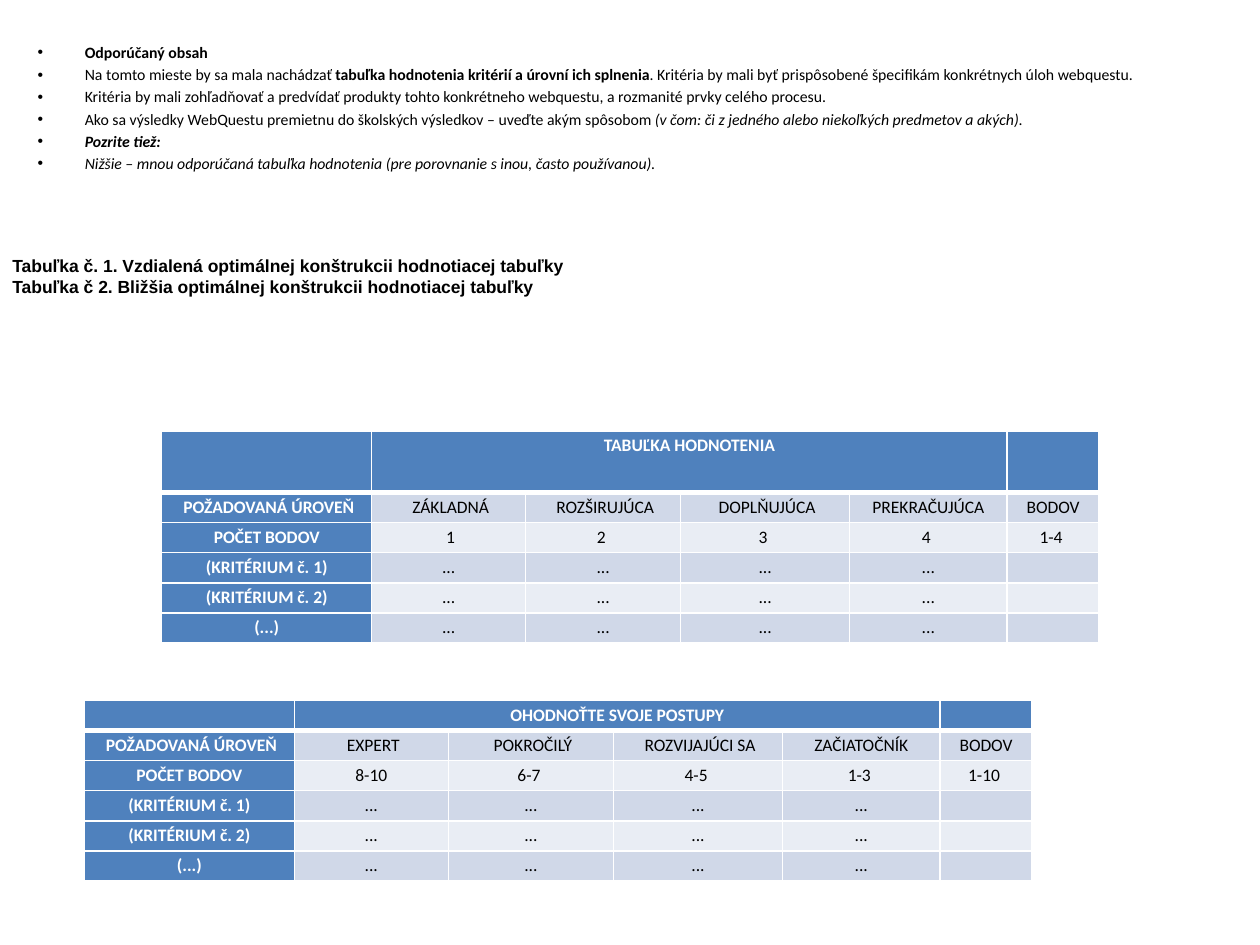
from lxml.etree import SubElement
from pptx import Presentation
from pptx.dml.color import RGBColor
from pptx.enum.shapes import MSO_SHAPE
from pptx.enum.text import MSO_ANCHOR, PP_ALIGN
from pptx.oxml.ns import qn
from pptx.util import Pt

BLACK = RGBColor(0x00, 0x00, 0x00)
WHITE = RGBColor(0xFF, 0xFF, 0xFF)
BLUE = RGBColor(0x4F, 0x81, 0xBD)
BAND_DARK = RGBColor(0xD0, 0xD8, 0xE8)
BAND_LIGHT = RGBColor(0xE9, 0xED, 0xF4)

BOLD, ITALIC = "bold", "italic"
RECOMMENDATIONS = [
    [("Odporúčaný obsah", BOLD)],
    [("Na tomto mieste by sa mala nachádzať ", ""),
     ("tabuľka hodnotenia kritérií a úrovní ich splnenia", BOLD),
     (". Kritéria by mali byť prispôsobené špecifikám konkrétnych úloh webquestu.", "")],
    [("Kritéria by mali zohľadňovať a predvídať produkty tohto konkrétneho webquestu, "
      "a rozmanité prvky celého procesu.", "")],
    [("Ako sa výsledky WebQuestu premietnu do školských výsledkov – uveďte akým spôsobom ", ""),
     ("(v čom: či z jedného alebo niekoľkých predmetov a akých)", ITALIC),
     (".", "")],
    [("Pozrite tiež:", BOLD + ITALIC)],
    [("Nižšie – mnou odporúčaná tabuľka hodnotenia "
      "(pre porovnanie s inou, často používanou). ", ITALIC)],
]
CAPTIONS = [
    "Tabuľka č. 1. Vzdialená optimálnej konštrukcii hodnotiacej tabuľky",
    "Tabuľka č 2. Bližšia optimálnej konštrukcii hodnotiacej tabuľky",
]
CRITERIA = [[name] + ["..."] * 4 + [""]
            for name in ("(KRITÉRIUM č. 1)", "(KRITÉRIUM č. 2)", "(...)")]
ROW_HEIGHT = 17.2


def style_font(font, name, size, color, bold=None):
    """Set the common properties of a font."""
    font.name, font.size, font.bold = name, Pt(size), bold
    font.color.rgb = color


def add_bullet(paragraph):
    """Give a paragraph a hanging round bullet."""
    properties = paragraph._p.get_or_add_pPr()
    properties.set("marL", str(Pt(27)))
    properties.set("indent", str(Pt(-27)))
    SubElement(properties, qn("a:buFont")).set("typeface", "Arial")
    SubElement(properties, qn("a:buChar")).set("char", "•")


def add_recommendations(slide):
    """Add the bulleted list at the top."""
    frame = slide.shapes.add_textbox(Pt(14.4), Pt(21), Pt(648), Pt(356)).text_frame
    frame.word_wrap = True
    for index, runs in enumerate(RECOMMENDATIONS):
        paragraph = frame.paragraphs[0] if index == 0 else frame.add_paragraph()
        paragraph.space_before = Pt(1.8)
        add_bullet(paragraph)
        style_font(paragraph.font, "Calibri", 9, BLACK)
        for text, emphasis in runs:
            run = paragraph.add_run()
            run.text = text
            run.font.bold = BOLD in emphasis
            run.font.italic = ITALIC in emphasis


def add_captions(slide):
    """Add the two table captions on a white rectangle."""
    shape = slide.shapes.add_shape(MSO_SHAPE.RECTANGLE, Pt(0), Pt(142), Pt(332.6), Pt(31.5))
    shape.shadow.inherit = False
    shape.fill.solid()
    shape.fill.fore_color.rgb = WHITE
    shape.line.fill.background()
    frame = shape.text_frame
    frame.word_wrap = False
    frame.vertical_anchor = MSO_ANCHOR.MIDDLE
    frame.text = "\n".join(CAPTIONS)
    for paragraph in frame.paragraphs:
        paragraph.alignment = PP_ALIGN.LEFT
        style_font(paragraph.font, "Arial", 10, BLACK, True)


def add_border(cell, side, width):
    """Draw one white cell border."""
    line = SubElement(cell._tc.get_or_add_tcPr(), qn(f"a:ln{side}"), w=str(Pt(width)))
    fill = SubElement(line, qn("a:solidFill"))
    SubElement(fill, qn("a:srgbClr")).set("val", str(WHITE))


def style_cell(cell, text, row, column):
    """Write and colour a cell according to its place in the grid."""
    heading = row == 0 or column == 0
    cell.margin_left = cell.margin_right = cell.margin_top = cell.margin_bottom = Pt(0.7)
    for side in "LRTB":
        under_header = (row, side) in ((0, "B"), (1, "T"))
        add_border(cell, side, 3 if under_header else 1)
    cell.fill.solid()
    band = BAND_DARK if row % 2 else BAND_LIGHT
    cell.fill.fore_color.rgb = BLUE if heading else band
    cell.text = text
    paragraph = cell.text_frame.paragraphs[0]
    paragraph.alignment = PP_ALIGN.CENTER
    paragraph.line_spacing = 1.15
    style_font(paragraph.font, "Calibri", 10, WHITE if heading else BLACK, heading)


def add_rating_table(slide, left, top, widths, header_height, title, levels, points):
    """Add a rating table with a merged title and the shared criteria rows."""
    rows = [["", title, "", "", "", ""],
            [" POŽADOVANÁ ÚROVEŇ", *levels, "BODOV"],
            ["POČET BODOV", *points],
            *CRITERIA]
    heights = [header_height] + [ROW_HEIGHT] * (len(rows) - 1)
    table = slide.shapes.add_table(len(rows), len(widths), Pt(left), Pt(top),
                                   Pt(sum(widths)), Pt(sum(heights))).table
    for column, width in zip(table.columns, widths):
        column.width = Pt(width)
    for row, height in zip(table.rows, heights):
        row.height = Pt(height)
    for row, texts in enumerate(rows):
        for column, text in enumerate(texts):
            style_cell(table.cell(row, column), text, row, column)
    table.cell(0, 1).merge(table.cell(0, 4))


def main():
    """Build the slide and save it."""
    presentation = Presentation()
    presentation.slide_width, presentation.slide_height = Pt(720), Pt(540)
    slide = presentation.slides.add_slide(presentation.slide_layouts[6])
    add_recommendations(slide)
    add_rating_table(slide, 92.4, 246.2, [120, 88, 88.6, 96.5, 90, 52.6], 35.3,
                     "TABUĽKA HODNOTENIA",
                     [" ZÁKLADNÁ", " ROZŠIRUJÚCA", " DOPLŇUJÚCA", "PREKRAČUJÚCA"],
                     [" 1", "2 ", "3 ", "4 ", "1-4 "])
    add_rating_table(slide, 48.2, 400.3, [120, 88, 94.5, 96.5, 90, 52.6], ROW_HEIGHT,
                     "OHODNOŤTE SVOJE POSTUPY",
                     [" EXPERT", " POKROČILÝ", " ROZVIJAJÚCI SA", "ZAČIATOČNÍK"],
                     ["8-10", "6-7 ", "4-5 ", "1-3 ", "1-10 "])
    add_captions(slide)
    presentation.save("out.pptx")


if __name__ == "__main__":
    main()
